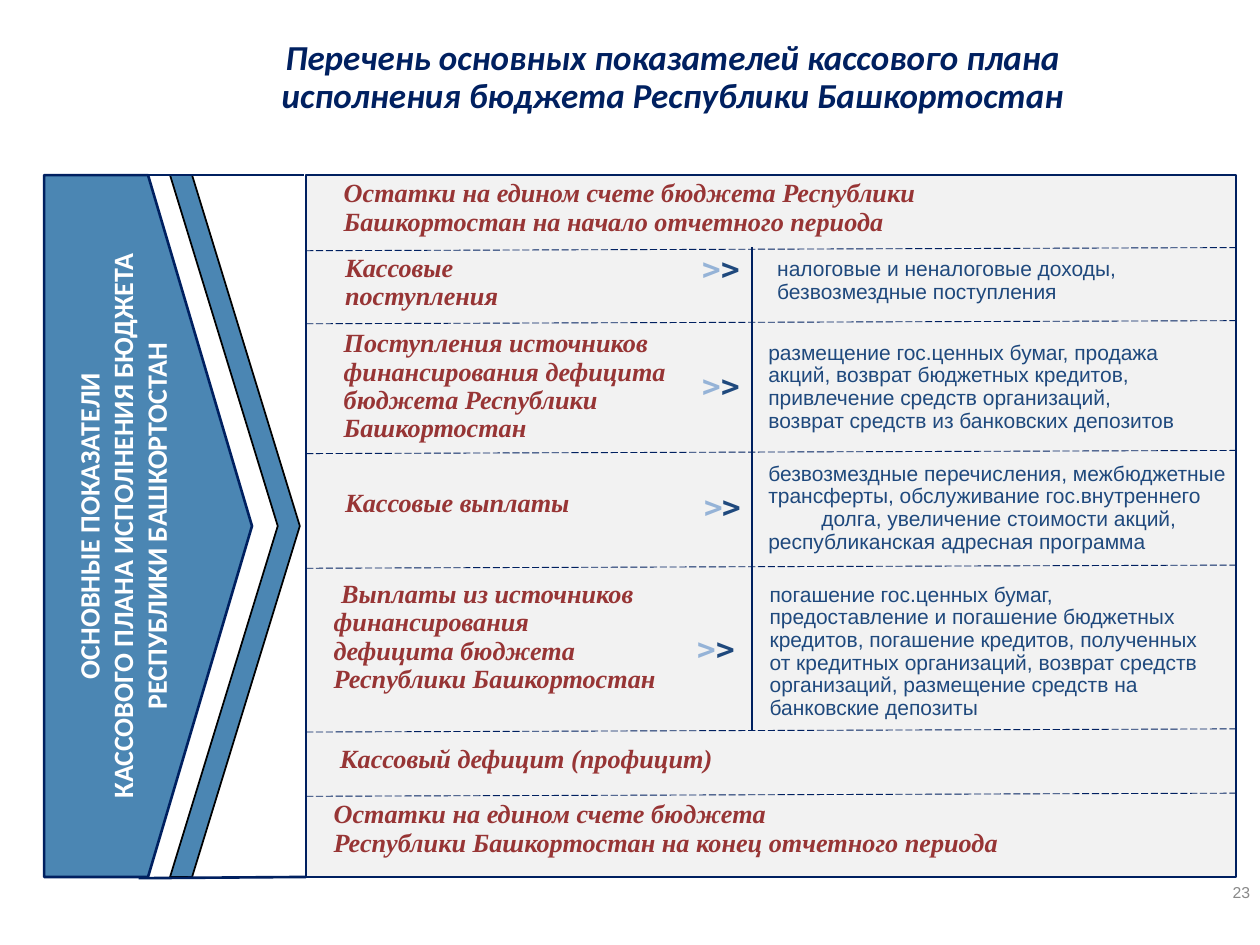
from lxml.etree import SubElement
from pptx import Presentation
from pptx.dml.color import RGBColor
from pptx.enum.dml import MSO_LINE
from pptx.enum.shapes import MSO_CONNECTOR, MSO_SHAPE
from pptx.enum.text import MSO_ANCHOR, MSO_AUTO_SIZE, PP_ALIGN
from pptx.oxml.ns import qn
from pptx.util import Inches, Pt

NAVY, STEEL, PALE = "002060", "4B86B3", "F2F2F2"
RED, BLUE, LIGHT_BLUE, GREY = "973535", "1F497D", "95B3D7", "898989"


def color(value):
    return RGBColor.from_string(value)


def write(para, text, font, size, fill, bold=False, italic=False):
    """Add one run; a newline in the text becomes a line break."""
    for index, line in enumerate(text.split("\n")):
        if index:
            para.add_line_break()
        span = para.add_run()
        span.text = line
        span.font.name, span.font.size = font, Pt(size)
        span.font.bold, span.font.italic = bold, italic
        span.font.color.rgb = color(fill)


deck = Presentation()
deck.slide_width, deck.slide_height = Inches(10), Inches(7.5)
page = deck.slides.add_slide(deck.slide_layouts[5])
shapes = page.shapes

# Grid: column edges, frame edges and the left ends of the row dividers
LEFT, TABLE, SPLIT, RIGHT = 0.35, 2.43, 5.97, 9.81
TOP, BOTTOM = 1.39, 6.96
HEIGHT = BOTTOM - TOP
DIVIDERS = [1.99, 2.57, 3.6, 4.51, 5.81, 6.32]
RISE = 0.025

# Title
title = shapes.title
title.left, title.top = Inches(1.45), Inches(0.21)
title.width, title.height = Inches(7.78), Inches(0.82)
frame = title.text_frame
frame.word_wrap, frame.auto_size = True, MSO_AUTO_SIZE.NONE
frame.vertical_anchor = MSO_ANCHOR.MIDDLE
para = frame.paragraphs[0]
para.alignment, para.line_spacing = PP_ALIGN.CENTER, 0.9
write(para, "Перечень основных показателей кассового плана исполнения бюджета "
      "Республики Башкортостан", "Calibri", 20, NAVY, True, True)

# Table frame, pentagon and chevron: kind, left, width, fill, line, line width
outlines = [
    (MSO_SHAPE.RECTANGLE, TABLE, RIGHT - TABLE, PALE, NAVY, 1.5),
    (MSO_SHAPE.PENTAGON, LEFT, 1.65, STEEL, NAVY, 1.5),
    (MSO_SHAPE.CHEVRON, 1.35, 1.03, STEEL, "000000", 1),
]
drawn = []
for kind, left, width, fill, line, weight in outlines:
    shape = shapes.add_shape(kind, Inches(left), Inches(TOP), Inches(width), Inches(HEIGHT))
    shape.shadow.inherit = False
    shape.fill.solid()
    shape.fill.fore_color.rgb = color(fill)
    shape.line.color.rgb = color(line)
    shape.line.width = Pt(weight)
    drawn.append(shape)
table_frame, pentagon, chevron = drawn
chevron.adjustments[0] = 0.83

frame = pentagon.text_frame
frame.word_wrap, frame.vertical_anchor = True, MSO_ANCHOR.MIDDLE
frame._txBody.bodyPr.set("vert", "vert270")
for index, text in enumerate([
        "ОСНОВНЫЕ ПОКАЗАТЕЛИ",
        "КАССОВОГО ПЛАНА ИСПОЛНЕНИЯ БЮДЖЕТА РЕСПУБЛИКИ БАШКОРТОСТАН"]):
    para = frame.add_paragraph() if index else frame.paragraphs[0]
    para.alignment = PP_ALIGN.CENTER
    write(para, text, "Calibri", 16, "FFFFFF", True)

# Row names and their contents: box, first-line indent of each paragraph, text
names = [
    (2.63, 1.38, 6.2, 0.56, [(0, "Остатки на едином счете бюджета Республики "
                                 "Башкортостан на начало отчетного периода")]),
    (2.64, 1.97, 2.21, 0.55, [(0, "Кассовые поступления")]),
    (2.63, 2.57, 3.36, 1.01, [(0, "Поступления источников финансирования дефицита "
                                  "бюджета Республики Башкортостан")]),
    (2.64, 3.84, 2.11, 0.33, [(0, "Кассовые выплаты")]),
    (2.55, 4.56, 3.08, 1.01, [(0.06, "Выплаты из источников финансирования\n"
                                     "дефицита бюджета Республики Башкортостан")]),
    (2.6, 5.87, 5.13, 0.33, [(0, "Кассовый дефицит (профицит)")]),
    (2.55, 6.31, 6.34, 0.56, [(0, "Остатки на едином счете бюджета\n"
                                  "Республики Башкортостан на конец отчетного периода")]),
]
contents = [
    (6.07, 2, 3.15, 0.46, [(0, "налоговые и неналоговые доходы, безвозмездные поступления")]),
    (6, 2.66, 3.47, 0.83, [(0, "размещение гос.ценных бумаг, продажа акций, возврат бюджетных "
                               "кредитов, привлечение средств организаций, возврат средств из "
                               "банковских депозитов")]),
    (6, 3.62, 3.86, 0.83, [(0, "безвозмездные перечисления, межбюджетные трансферты, "
                               "обслуживание гос.внутреннего"),
                           (0.42, "долга, увеличение стоимости акций, республиканская "
                                  "адресная программа")]),
    (6.01, 4.58, 3.65, 1.19, [(0, "погашение гос.ценных бумаг, предоставление и погашение "
                                  "бюджетных кредитов, погашение кредитов, полученных от "
                                  "кредитных организаций, возврат средств организаций, "
                                  "размещение средств на банковские депозиты")]),
]
styles = [
    (names, MSO_ANCHOR.TOP, ("Times New Roman", 15, RED, True, True)),
    (contents, MSO_ANCHOR.MIDDLE, ("Arial", 12, BLUE)),
]
for entries, anchor, style in styles:
    for left, top, width, height, paragraphs in entries:
        box = shapes.add_textbox(Inches(left), Inches(top), Inches(width), Inches(height))
        frame = box.text_frame
        frame.word_wrap, frame.auto_size = True, MSO_AUTO_SIZE.SHAPE_TO_FIT_TEXT
        frame.vertical_anchor = anchor
        for index, (indent, text) in enumerate(paragraphs):
            para = frame.add_paragraph() if index else frame.paragraphs[0]
            para.line_spacing = 0.9
            if indent:
                para._p.get_or_add_pPr().set("indent", str(Inches(indent)))
            write(para, text, *style)

# Double arrow signs before the divider column
for left, top in [(5.48, 1.94), (5.48, 2.87), (5.49, 3.83), (5.44, 4.96)]:
    box = shapes.add_textbox(Inches(left), Inches(top), Inches(0.51), Inches(0.4))
    frame = box.text_frame
    frame.word_wrap, frame.auto_size = False, MSO_AUTO_SIZE.SHAPE_TO_FIT_TEXT
    for fill in (LIGHT_BLUE, BLUE):
        write(frame.paragraphs[0], ">", "Noto Sans CJK KR", 18, fill, True)

# Row dividers, frame extensions and column divider: ends, weight, dash
lines = [(TABLE, y, RIGHT, y - RISE, 0.5, MSO_LINE.LONG_DASH) for y in DIVIDERS]
lines += [
    (1.09, TOP, 2.41, TOP, 1.5, None),
    (1.1, BOTTOM + 0.01, TABLE, BOTTOM, 1.5, None),
    (SPLIT, 1.96, SPLIT, 5.8, 1.25, None),
]
for x1, y1, x2, y2, weight, dash in lines:
    line = shapes.add_connector(MSO_CONNECTOR.STRAIGHT, Inches(x1), Inches(y1),
                                Inches(x2), Inches(y2))
    line.line.color.rgb = color(NAVY)
    line.line.width = Pt(weight)
    if dash:
        line.line.dash_style = dash
    SubElement(line._element.spPr, qn("a:effectLst"))

# Page number
box = shapes.add_textbox(Inches(7.77), Inches(6.88), Inches(2.25), Inches(0.4))
frame = box.text_frame
frame.word_wrap, frame.vertical_anchor = True, MSO_ANCHOR.MIDDLE
frame.paragraphs[0].alignment = PP_ALIGN.RIGHT
write(frame.paragraphs[0], "23", "Arial", 9, GREY)

deck.save("out.pptx")
